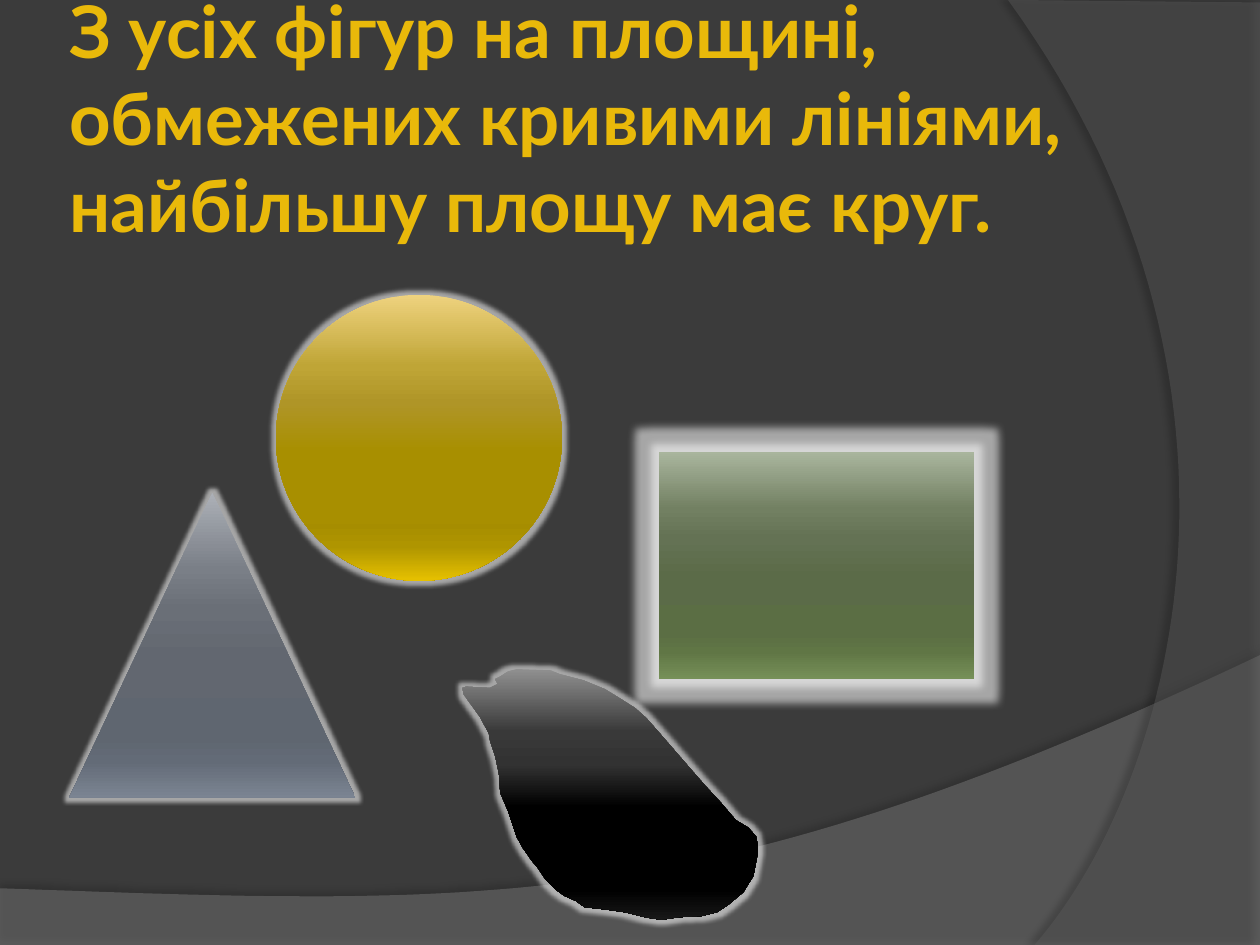
from lxml.etree import SubElement
from pptx import Presentation
from pptx.dml.color import RGBColor
from pptx.enum.shapes import MSO_SHAPE
from pptx.enum.text import MSO_ANCHOR
from pptx.oxml.ns import qn
from pptx.util import Inches, Pt

COLORS = {"back": "3B3B3B", "hill": "7F7F7F", "arc": "5E5E5E",
          "title": "E9B90A", "shadow": "000000", "glow": "FFFFFF"}
STOPS = (0, 25, 38, 55, 80, 88, 100)
GRADIENTS = {
    "circle": "EED27E BFA536 AF9527 A88F00 A68D00 AF9500 E6C100",
    "rectangle": "A9B59D 728062 647254 5B6B48 5B6E44 607645 769058",
    "triangle": "ACB0B7 7A7F87 6A6F77 626770 5F6670 636B77 7B8492",
    "blob": "909090 393939 323232 000000 000000 000000 181818",
}

prs = Presentation()
prs.slide_width, prs.slide_height = Inches(10), Inches(7.5)
W, H = prs.slide_width, prs.slide_height
s = prs.slides.add_slide(prs.slide_layouts[6])
s.background.fill.solid()
s.background.fill.fore_color.rgb = RGBColor.from_string(COLORS["back"])


def add_color(parent, color, alpha=100):
    clr = SubElement(parent, qn("a:srgbClr"), val=color)
    if alpha < 100:
        SubElement(clr, qn("a:alpha"), val=str(alpha * 1000))


def bezier(a, b, c, d, n=60):
    steps = [i / n for i in range(n + 1)]
    return [tuple((1 - t) ** 3 * p + 3 * t * (1 - t) ** 2 * q
                  + 3 * t * t * (1 - t) * u + t ** 3 * v
                  for p, q, u, v in zip(a, b, c, d)) for t in steps]


# Background waves: colour, opacity, outline in inches, shadow opacity, distance, direction
hill = [(0, 7.5), (10, 7.5)] + bezier((10, 5.2), (5.59, 7.29), (3.91, 7.19), (0, 7.05))
arc = [(10, 0.02), (10, 7.5)] + bezier((8.21, 7.5), (9.35, 6.19), (10.18, 3), (8, 0))
for name, alpha, pts, dark, dist, angle in (("hill", 45, hill, 35, 3.5, 270),
                                            ("arc", 40, arc, 45, 4, 180)):
    fb = s.shapes.build_freeform(pts[0][0] * 1000, pts[0][1] * 1000, Inches(1) / 1000)
    fb.add_line_segments([(x * 1000, y * 1000) for x, y in pts[1:]])
    sp = fb.convert_to_shape()
    sp.fill.solid()
    sp.fill.fore_color.rgb = RGBColor.from_string(COLORS[name])
    clr = sp.fill._xPr.find(qn("a:solidFill"))[0]
    SubElement(clr, qn("a:alpha"), val=str(alpha * 1000))
    sp.line.fill.background()
    sp.shadow.inherit = False
    shadow = SubElement(sp._element.spPr.find(qn("a:effectLst")), qn("a:outerShdw"),
                        blurRad=str(Pt(4)), dist=str(Pt(dist)),
                        dir=str(angle * 60000), algn="ctr", rotWithShape="0")
    add_color(shadow, COLORS["shadow"], dark)

# Title
tf = s.shapes.add_textbox(int(W * 0.05), int(H * 0.04), Inches(8.17), Inches(1.25)).text_frame
tf.word_wrap = True
tf.vertical_anchor = MSO_ANCHOR.MIDDLE
tf.margin_left = tf.margin_right = tf.margin_top = tf.margin_bottom = Inches(0.05)
tf.text = "З усіх фігур на площині, обмежених кривими лініями, найбільшу площу має круг."
r = tf.paragraphs[0].runs[0]
r.font.name, r.font.size, r.font.bold = "Lato", Pt(41.4), True
r.font.color.rgb = RGBColor.from_string(COLORS["title"])

# Plane figures
figures = {}
for name, kind, box in (("circle", MSO_SHAPE.OVAL, (2.19, 2.34, 2.27, 2.27)),
                        ("rectangle", MSO_SHAPE.RECTANGLE, (5.23, 3.59, 2.5, 1.8)),
                        ("triangle", MSO_SHAPE.ISOSCELES_TRIANGLE, (0.55, 3.91, 2.27, 2.42))):
    figures[name] = s.shapes.add_shape(kind, *[Inches(v) for v in box])

# Irregular figure, outline in hundredths of an inch
blob = [(393, 539), (397, 537), (403, 533), (410, 531), (437, 532), (444, 535),
        (463, 540), (480, 547), (493, 555), (504, 562), (513, 570), (527, 586),
        (540, 601), (553, 616), (560, 624), (572, 637), (584, 651), (594, 657),
        (600, 664), (602, 674), (598, 695), (590, 708), (578, 718), (569, 724),
        (557, 727), (538, 728), (525, 730), (512, 728), (496, 724), (482, 722),
        (464, 720), (457, 715), (448, 711), (441, 706), (433, 698), (427, 689),
        (422, 683), (415, 673), (410, 664), (407, 655), (403, 643), (397, 629),
        (396, 614), (393, 600), (389, 588), (388, 582), (381, 569), (373, 558),
        (368, 551), (367, 546), (370, 545), (389, 546), (395, 543)]
fb = s.shapes.build_freeform(*blob[0], Inches(0.01))
fb.add_line_segments(blob[1:])
figures["blob"] = fb.convert_to_shape()

# Shaded fill and pale halo of every figure
for name, sp in figures.items():
    sp.fill.gradient()
    sp.fill.gradient_angle = 270
    stops = sp.fill._xPr.find(qn("a:gradFill")).find(qn("a:gsLst"))
    for old in list(stops):
        stops.remove(old)
    for pos, color in zip(STOPS, GRADIENTS[name].split()):
        add_color(SubElement(stops, qn("a:gs"), pos=str(pos * 1000)), color)
    sp.line.fill.background()
    sp.shadow.inherit = False
    radius = Pt(9 if name == "rectangle" else 5)
    glow = SubElement(sp._element.spPr.find(qn("a:effectLst")), qn("a:glow"), rad=str(radius))
    add_color(glow, COLORS["glow"], 55)

prs.save("out.pptx")
